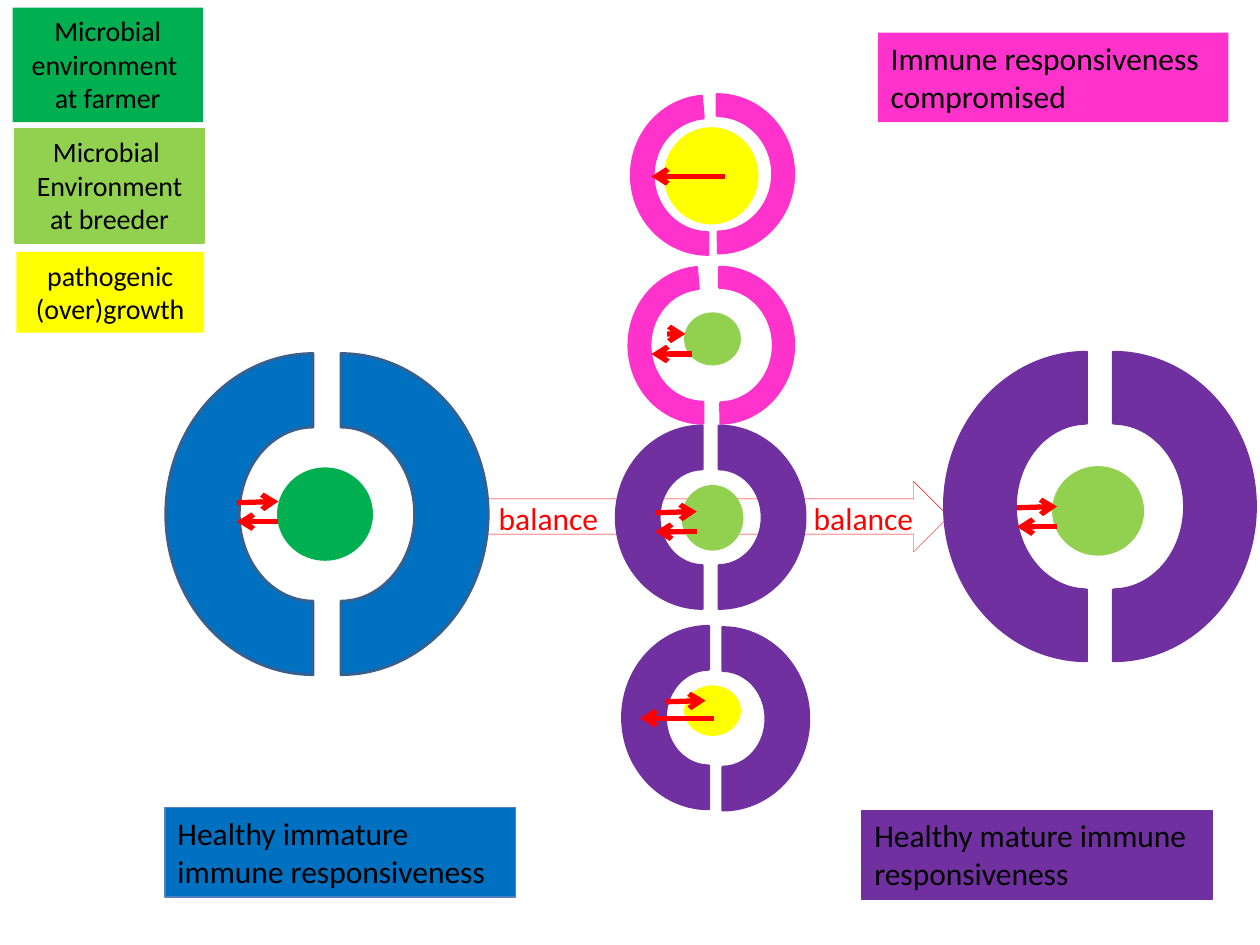
from dataclasses import dataclass

from lxml import etree
from pptx import Presentation
from pptx.dml.color import RGBColor
from pptx.enum.shapes import MSO_CONNECTOR, MSO_SHAPE
from pptx.enum.text import MSO_ANCHOR, PP_ALIGN
from pptx.oxml.ns import qn
from pptx.util import Inches, Pt

RECTANGLE = MSO_SHAPE.RECTANGLE
OVAL = MSO_SHAPE.OVAL
BLOCK_ARC = MSO_SHAPE.BLOCK_ARC
RIGHT_ARROW = MSO_SHAPE.RIGHT_ARROW
STRAIGHT = MSO_CONNECTOR.STRAIGHT
TOP = MSO_ANCHOR.TOP
LEFT, CENTER = PP_ALIGN.LEFT, PP_ALIGN.CENTER

FONT = "Calibri"
BLACK, RED, YELLOW = "000000", "FF0000", "FFFF00"
GREEN, LIGHT_GREEN = "00B050", "92D050"
BLUE, BLUE_EDGE, BLUE_BORDER = "0070C0", "3A5F8C", "4F81BD"
PURPLE, PINK = "7030A0", "FF33CC"

# Block arc adjustments of the thin rings: left half, right half
THIN_HALVES = ((108, 213.201, 0.144), (108, 215.447, 0.139))


@dataclass
class Cell:
    """A split ring; nucleus and arrows are offsets from the box corner.

    The box is the frame of the left half before its quarter turn.
    """
    box: tuple
    right_shift: tuple
    ring_color: str
    nucleus: tuple
    nucleus_color: str
    arrows: tuple
    edge_color: str = ""
    halves: tuple = ((), ())


CELLS = [
    Cell((1.21, 2.91, 2.55, 2.34), (0.22, 0), BLUE,
         (1, 0.81, 0.74, 0.72), GREEN,
         ((0.67, 1.08, 1, 1.07), (1, 1.23, 0.67, 1.23)), BLUE_EDGE),
    Cell((4.99, 0.78, 1.26, 1.22), (0.07, -0.01), PINK,
         (0.29, 0.24, 0.73, 0.75), YELLOW,
         ((0.76, 0.62, 0.18, 0.62),), halves=THIN_HALVES),
    Cell((4.96, 2.15, 1.24, 1.18), (0.13, 0), PINK,
         (0.48, 0.34, 0.43, 0.4), LIGHT_GREEN,
         ((0.39, 0.5, 0.48, 0.5), (0.53, 0.66, 0.21, 0.66)),
         halves=THIN_HALVES),
    Cell((4.85, 3.42, 1.45, 1.37), (0.13, 0), PURPLE,
         (0.57, 0.44, 0.47, 0.5), LIGHT_GREEN,
         ((0.35, 0.65, 0.68, 0.64), (0.68, 0.8, 0.35, 0.8))),
    Cell((4.9, 5.01, 1.45, 1.37), (0.11, 0.01), PURPLE,
         (0.54, 0.44, 0.43, 0.38), YELLOW,
         ((0.38, 0.56, 0.7, 0.55), (0.77, 0.69, 0.18, 0.69))),
    Cell((7.4, 2.89, 2.45, 2.26), (0.21, 0), PURPLE,
         (0.96, 0.82, 0.71, 0.69), LIGHT_GREEN,
         ((0.67, 1.14, 0.99, 1.13), (0.99, 1.29, 0.67, 1.29))),
]

# Box, paragraphs, fill, border
LEGEND = [
    ((0.1, 0.06, 1.51, 0.91), ["Microbial environment ", "at farmer"], GREEN, None),
    ((0.12, 1.02, 1.5, 0.91), ["Microbial ", "Environment at breeder"],
     LIGHT_GREEN, LIGHT_GREEN),
    ((0.13, 2, 1.49, 0.64), ["pathogenic (over)growth"], YELLOW, None),
]
CAPTIONS = [
    ((6.97, 0.26, 2.78, 0.71), ["Immune responsiveness compromised"], PINK, None),
    ((6.84, 6.43, 2.78, 0.71), ["Healthy mature immune responsiveness"],
     PURPLE, PURPLE),
    ((1.31, 6.41, 2.78, 0.71), ["Healthy immature immune responsiveness"],
     BLUE, BLUE_BORDER),
]


def color(hex_string):
    return RGBColor.from_string(hex_string)


def add_shape(slide, kind, box, fill=None, line=None, line_width=1.5):
    shape = slide.shapes.add_shape(kind, *map(Inches, box))
    shape.shadow.inherit = False
    if fill:
        shape.fill.solid()
        shape.fill.fore_color.rgb = color(fill)
    else:
        shape.fill.background()
    if line:
        shape.line.color.rgb = color(line)
        shape.line.width = Pt(line_width)
    else:
        shape.line.fill.background()
    return shape


def write_text(shape, paragraphs, size=18, font_color=BLACK, align=LEFT, wrap=True):
    frame = shape.text_frame
    frame.word_wrap = wrap
    frame.vertical_anchor = TOP
    frame.text = "\n".join(paragraphs)
    for paragraph in frame.paragraphs:
        paragraph.alignment = align
        font = paragraph.runs[0].font
        font.name = FONT
        font.size = Pt(size)
        font.color.rgb = color(font_color)


def add_red_arrow(slide, ends):
    connector = slide.shapes.add_connector(STRAIGHT, *map(Inches, ends))
    connector.line.color.rgb = color(RED)
    connector.line.width = Pt(3)
    properties = connector.line._get_or_add_ln()
    etree.SubElement(properties, qn("a:tailEnd"), type="arrow")
    etree.SubElement(connector._element.spPr, qn("a:effectLst"))


def add_cell(slide, cell):
    left, top, width, height = cell.box
    shift_x, shift_y = cell.right_shift
    edge = cell.edge_color or cell.ring_color
    sides = ((left, top, 270), (left + shift_x, top + shift_y, 90))
    for (x, y, rotation), adjustments in zip(sides, cell.halves):
        half = add_shape(slide, BLOCK_ARC, (x, y, width, height),
                         cell.ring_color, edge)
        half.rotation = rotation
        for index, value in enumerate(adjustments):
            half.adjustments[index] = value

    x, y, *size = cell.nucleus
    add_shape(slide, OVAL, (left + x, top + y, *size),
              cell.nucleus_color, cell.nucleus_color)
    for start_x, start_y, end_x, end_y in cell.arrows:
        add_red_arrow(slide, (left + start_x, top + start_y,
                              left + end_x, top + end_y))


def add_balance_arrow(slide, box):
    left, top, _, _ = box
    add_shape(slide, RIGHT_ARROW, box, line=RED, line_width=0.25)
    for offset in (0.04, 2.54):
        label_box = (left + offset, top + 0.09, 1, 0.4)
        label = slide.shapes.add_textbox(*map(Inches, label_box))
        write_text(label, ["balance"], font_color=RED, wrap=False)


def add_labels(slide, labels, **text_format):
    for box, paragraphs, fill, border in labels:
        label = add_shape(slide, RECTANGLE, box, fill, border, 0.75)
        write_text(label, paragraphs, **text_format)


def main():
    presentation = Presentation()
    presentation.slide_width = Inches(10)
    presentation.slide_height = Inches(7.5)
    slide = presentation.slides.add_slide(presentation.slide_layouts[6])

    add_balance_arrow(slide, (3.82, 3.82, 3.71, 0.56))
    for cell in CELLS:
        add_cell(slide, cell)
    add_labels(slide, LEGEND, size=16, align=CENTER)
    add_labels(slide, CAPTIONS)

    presentation.save("out.pptx")


if __name__ == "__main__":
    main()
